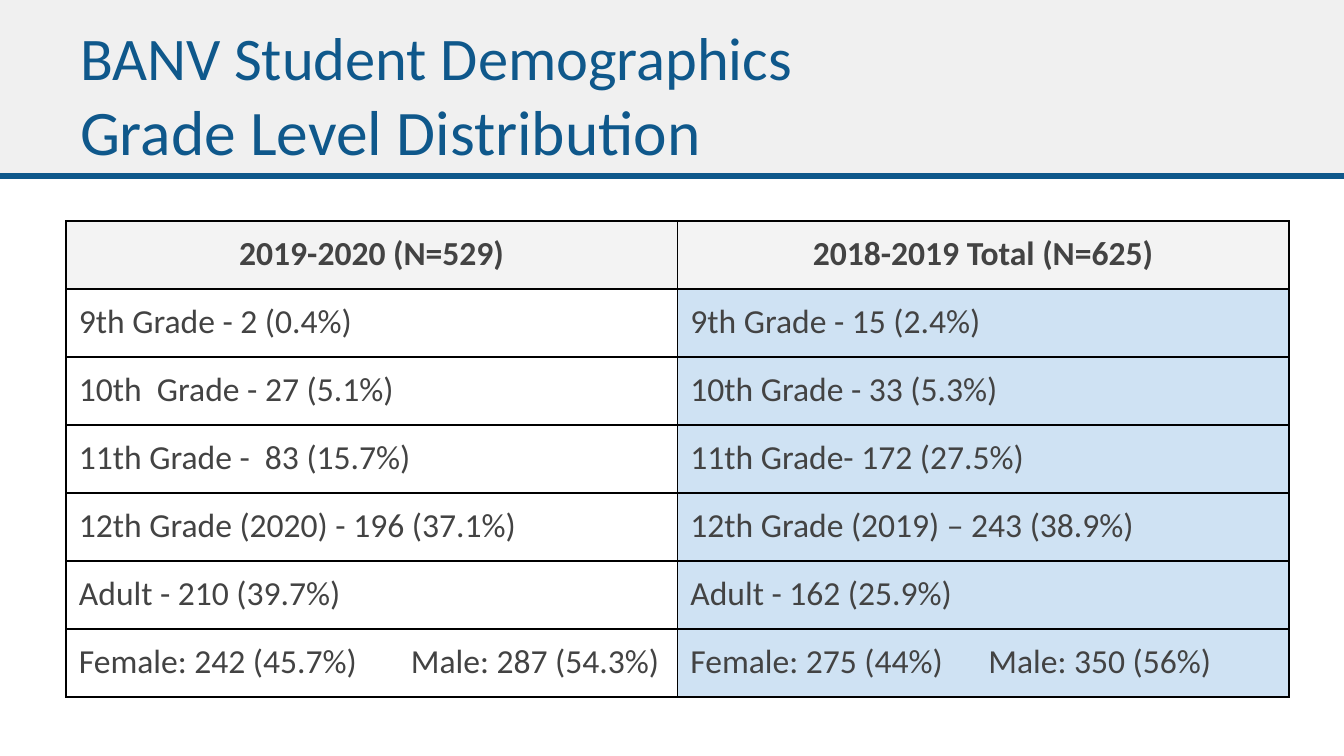
"""Build the grade level distribution slide."""
from dataclasses import dataclass

from lxml.etree import SubElement
from pptx import Presentation
from pptx.dml.color import RGBColor
from pptx.enum.shapes import MSO_CONNECTOR as Connector, MSO_SHAPE as Shape
from pptx.enum.text import MSO_ANCHOR as Anchor, MSO_AUTO_SIZE as AutoSize, PP_ALIGN as Align
from pptx.oxml.ns import qn
from pptx.util import Emu, Pt

PX_PER_INCH = 134.4
PAGE_WIDTH, PAGE_HEIGHT = 1344, 756
BAND_HEIGHT = 176
INSET = 13
FONT = "Calibri"

BLUE = RGBColor(0x0F, 0x58, 0x8B)
BAND_GRAY = RGBColor(0xF0, 0xF0, 0xF0)
HEADER_GRAY = RGBColor(0xF3, 0xF3, 0xF3)
PALE_BLUE = RGBColor(0xCF, 0xE2, 0xF3)
TEXT_GRAY = RGBColor(0x43, 0x43, 0x43)
WHITE = RGBColor(0xFF, 0xFF, 0xFF)
BLACK = RGBColor(0x00, 0x00, 0x00)


@dataclass(frozen=True)
class YearColumn:
    """One school year: its heading, entries, fill and tab position."""
    heading: str
    entries: tuple[str, ...]
    fill: RGBColor
    tab: int


YEARS = (
    YearColumn("2019-2020 (N=529)", (
        "9th Grade - 2 (0.4%)",
        "10th  Grade - 27 (5.1%)",
        "11th Grade -  83 (15.7%)",
        "12th Grade (2020) - 196 (37.1%)",
        "Adult - 210 (39.7%)",
        "Female: 242 (45.7%)\tMale: 287 (54.3%)",
    ), WHITE, 332),
    YearColumn("2018-2019 Total (N=625)", (
        "9th Grade - 15 (2.4%)",
        "10th Grade - 33 (5.3%)",
        "11th Grade- 172 (27.5%)",
        "12th Grade (2019) – 243 (38.9%)",
        "Adult - 162 (25.9%)",
        "Female: 275 (44%)\tMale: 350 (56%)",
    ), PALE_BLUE, 298),
)


def px(length: int) -> Emu:
    """Turn pixels into EMU."""
    return Emu(round(length * 914400 / PX_PER_INCH))


def set_insets(target) -> None:
    """Give a cell or text frame equal margins."""
    target.margin_left = target.margin_right = px(INSET)
    target.margin_top = target.margin_bottom = px(INSET)


def set_font(para, size: float, color: RGBColor, bold: bool = False) -> None:
    """Format the font of a paragraph."""
    font = para.font
    font.name, font.size, font.bold = FONT, Pt(size), bold
    font.color.rgb = color


def add_band(page) -> None:
    """Draw the title band and the rule below it."""
    band = page.shapes.add_shape(Shape.RECTANGLE, 0, 0, px(PAGE_WIDTH), px(BAND_HEIGHT))
    band.shadow.inherit = False
    band.fill.solid()
    band.fill.fore_color.rgb = BAND_GRAY
    band.line.fill.background()
    rule = page.shapes.add_connector(
        Connector.STRAIGHT, 0, px(BAND_HEIGHT), px(PAGE_WIDTH), px(BAND_HEIGHT))
    rule.line.color.rgb = BLUE
    rule.line.width = Pt(3)
    SubElement(rule._element.spPr, qn("a:effectLst"))


def format_title(page) -> None:
    """Fill the title placeholder and bring it in front of the band."""
    title = page.shapes.title
    title.left, title.top, title.width, title.height = map(px, (67, 31, 1031, 126))
    frame = title.text_frame
    set_insets(frame)
    frame.word_wrap = True
    frame.auto_size = AutoSize.NONE
    frame.vertical_anchor = Anchor.MIDDLE
    frame.text = "BANV Student Demographics\nGrade Level Distribution"
    for para, size in zip(frame.paragraphs, (32.4, 34)):
        para.alignment = Align.LEFT
        set_font(para, size, BLUE)
    page.shapes._spTree.append(title._element)


def add_borders(cell) -> None:
    """Outline a cell with thin black lines."""
    properties = cell._tc.get_or_add_tcPr()
    for position, side in enumerate(("lnL", "lnR", "lnT", "lnB")):
        border = properties.makeelement(qn(f"a:{side}"), {"w": str(Pt(0.75))})
        fill = SubElement(border, qn("a:solidFill"))
        SubElement(fill, qn("a:srgbClr"), val=str(BLACK))
        properties.insert(position, border)


def fill_cell(cell, text: str, fill: RGBColor, tab: int, heading: bool) -> None:
    """Write and format one table cell."""
    set_insets(cell)
    cell.text = text
    cell.fill.solid()
    cell.fill.fore_color.rgb = fill
    add_borders(cell)
    para = cell.text_frame.paragraphs[0]
    para.alignment = Align.CENTER if heading else Align.LEFT
    if "\t" in text:
        tabs = SubElement(para._p.get_or_add_pPr(), qn("a:tabLst"))
        SubElement(tabs, qn("a:tab"), pos=str(px(tab)), algn="l")
    set_font(para, 18, TEXT_GRAY, heading)


def add_grade_table(page, years: tuple[YearColumn, ...]) -> None:
    """Draw the table with one column for each school year."""
    row_count = len(years[0].entries) + 1
    table = page.shapes.add_table(
        row_count, len(years), px(66), px(221), px(1223), px(68 * row_count)).table
    table.first_row = table.horz_banding = False
    for column, year in enumerate(years):
        fill_cell(table.cell(0, column), year.heading, HEADER_GRAY, year.tab, True)
        for row, entry in enumerate(year.entries, start=1):
            fill_cell(table.cell(row, column), entry, year.fill, year.tab, False)


def main() -> None:
    """Build and save the deck."""
    deck = Presentation()
    deck.slide_width, deck.slide_height = px(PAGE_WIDTH), px(PAGE_HEIGHT)
    page = deck.slides.add_slide(deck.slide_layouts[5])
    add_band(page)
    format_title(page)
    add_grade_table(page, YEARS)
    deck.save("out.pptx")


if __name__ == "__main__":
    main()
